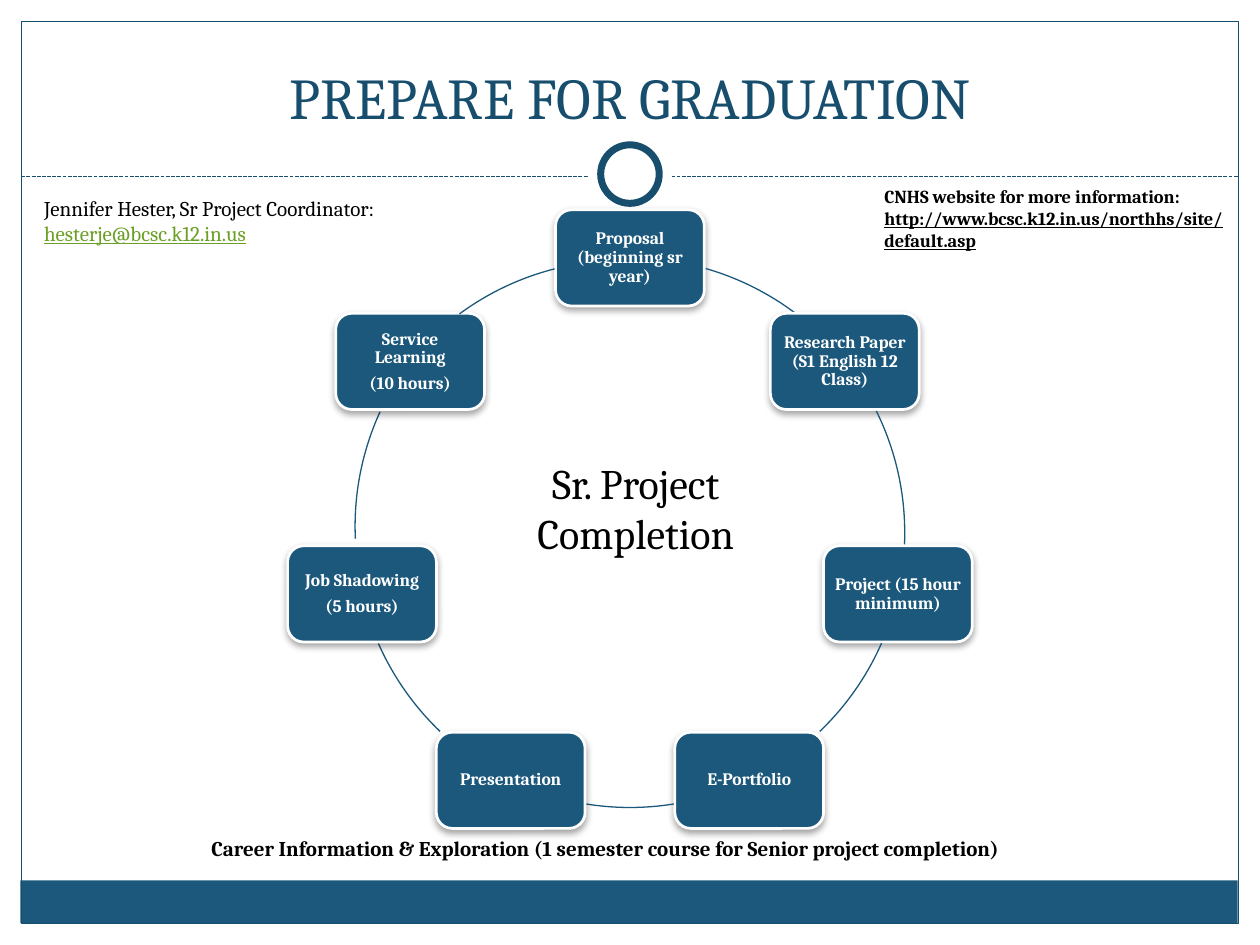
"""Build the senior project cycle slide."""
import math
from dataclasses import dataclass

import lxml.etree
import pptx
import pptx.dml.color
import pptx.enum.dml
import pptx.enum.shapes
import pptx.enum.text
import pptx.oxml.ns
import pptx.util
from pptx.util import Cm, Pt

RGBColor = pptx.dml.color.RGBColor
Shape = pptx.enum.shapes.MSO_SHAPE
Align = pptx.enum.text.PP_ALIGN
Anchor = pptx.enum.text.MSO_ANCHOR
qn = pptx.oxml.ns.qn

NAVY = RGBColor(0x18, 0x4E, 0x6D)
BLUE = RGBColor(0x1B, 0x58, 0x7C)
GREEN = RGBColor(0x6B, 0x9F, 0x25)
WHITE = RGBColor(0xFF, 0xFF, 0xFF)
BLACK = RGBColor(0, 0, 0)
FONT = "Cambria"

CENTER_X, CENTER_Y, RADIUS = 12.7, 10.74, 5.54
STEP_WIDTH, STEP_HEIGHT = 3.0, 1.94


@dataclass
class Step:
    """A project step and the angles of the arc that follows it."""
    lines: list[str]
    arc_start: float
    arc_end: float
    shift: float = 0
    arc_dx: float = 0
    arc_dy: float = 0


@dataclass
class Note:
    """A free text block with its place and format."""
    lines: list[str]
    box: tuple[float, float, float, float]
    size: float
    bold: bool = False
    align: Align = Align.LEFT
    link_color: RGBColor = BLACK


STEPS = [
    Step(["Proposal (beginning sr year)"], 286, 307),
    Step(["Research Paper (S1 English 12 Class)"], 333.7, 2.6),
    Step(["Project (15 hour minimum)"], 23.7, 46.3),
    Step(["E-Portfolio"], 80.8, 99.2),
    Step(["Presentation"], 133.7, 156.3),
    Step(["Job Shadowing", "(5 hours)"], 177.4, 204.6, arc_dy=-0.13),
    Step(["Service Learning", "(10 hours)"], 233.6, 255.7,
         shift=-0.1, arc_dx=-0.15, arc_dy=0.05),
]

NOTES = [
    Note(["Sr. Project Completion"], (9.32, 9.09, 6.99, 2.31), 24, align=Align.CENTER),
    Note(["Jennifer Hester, Sr Project Coordinator:", "hesterje@bcsc.k12.in.us"],
         (0.64, 3.81, 8.05, 1.27), 12, link_color=GREEN),
    Note(["CNHS website for more information:",
          "http://www.bcsc.k12.in.us/northhs/site/default.asp"],
         (17.58, 3.61, 7.62, 1.6), 10.5, bold=True),
    Note(["Career Information & Exploration (1 semester course for Senior project completion)"],
         (4.01, 16.71, 19.89, 0.76), 12, bold=True),
]


def write_text(frame, lines: list[str], *, size: float, color: RGBColor = BLACK,
               bold: bool = False, align: Align = Align.LEFT, anchor: Anchor = Anchor.TOP,
               spacing: float = 1.0, after: float = 0, link_color: RGBColor | None = None):
    frame.word_wrap = True
    frame.auto_size = pptx.enum.text.MSO_AUTO_SIZE.NONE
    frame.vertical_anchor = anchor
    for index, line in enumerate(lines):
        paragraph = frame.add_paragraph() if index else frame.paragraphs[0]
        paragraph.alignment = align
        paragraph.line_spacing = spacing
        paragraph.space_after = Pt(after)
        run = paragraph.add_run()
        run.text = line
        is_link = bool(index and link_color is not None)
        run.font.name = FONT
        run.font.size = Pt(size)
        run.font.bold = bold
        run.font.underline = is_link
        run.font.color.rgb = link_color if is_link else color


def add_figure(slide, kind: Shape, box: tuple[float, float, float, float], *,
               fill: RGBColor | None = None, line: RGBColor | None = None,
               weight: float = 0.75):
    figure = slide.shapes.add_shape(kind, *map(Cm, box))
    figure.shadow.inherit = False
    if fill is None:
        figure.fill.background()
    else:
        figure.fill.solid()
        figure.fill.fore_color.rgb = fill
    if line is None:
        figure.line.fill.background()
    else:
        figure.line.color.rgb = line
        figure.line.width = Pt(weight)
    return figure


def add_soft_shadow(figure) -> None:
    effects = figure._element.spPr.find(qn("a:effectLst"))
    shadow = lxml.etree.SubElement(effects, qn("a:outerShdw"), blurRad=str(Pt(4)),
                                   dist=str(Pt(2)), dir="5400000", rotWithShape="0")
    tint = lxml.etree.SubElement(shadow, qn("a:srgbClr"), val="000000")
    lxml.etree.SubElement(tint, qn("a:alpha"), val="35000")


def add_decor(slide) -> None:
    add_figure(slide, Shape.RECTANGLE, (0.41, 17.75, 24.54, 0.86), fill=BLUE)
    add_figure(slide, Shape.RECTANGLE, (0.43, 0.43, 24.54, 18.19), line=NAVY)
    divider = slide.shapes.add_connector(pptx.enum.shapes.MSO_CONNECTOR.STRAIGHT,
                                         Cm(0.43), Cm(3.56), Cm(24.97), Cm(3.56))
    divider.line.color.rgb = NAVY
    divider.line.width = Pt(0.75)
    divider.line.dash_style = pptx.enum.dml.MSO_LINE.SQUARE_DOT
    lxml.etree.SubElement(divider._element.spPr, qn("a:effectLst"))
    add_figure(slide, Shape.OVAL, (11.85, 2.66, 1.7, 1.7), fill=WHITE)
    add_figure(slide, Shape.OVAL, (12.11, 2.92, 1.18, 1.18), fill=WHITE, line=NAVY, weight=4)


def add_step(slide, step: Step, turn: float) -> None:
    left = CENTER_X + RADIUS * math.sin(turn) + step.shift - STEP_WIDTH / 2
    top = CENTER_Y - RADIUS * math.cos(turn) - STEP_HEIGHT / 2
    card = add_figure(slide, Shape.ROUNDED_RECTANGLE, (left, top, STEP_WIDTH, STEP_HEIGHT),
                      fill=BLUE, line=WHITE, weight=1.57)
    add_soft_shadow(card)
    frame = card.text_frame
    frame.margin_left = frame.margin_right = Cm(0.1)
    frame.margin_top = frame.margin_bottom = Cm(0.1)
    write_text(frame, step.lines, size=10, color=WHITE, bold=True, align=Align.CENTER,
               anchor=Anchor.MIDDLE, spacing=0.9, after=3.5)
    arc = add_figure(slide, Shape.ARC,
                     (CENTER_X - RADIUS + step.arc_dx, CENTER_Y - RADIUS + step.arc_dy,
                      2 * RADIUS, 2 * RADIUS), line=BLUE)
    arc.adjustments[0] = step.arc_start * 0.6
    arc.adjustments[1] = step.arc_end * 0.6


def add_note(slide, note: Note) -> None:
    block = slide.shapes.add_textbox(*map(Cm, note.box))
    write_text(block.text_frame, note.lines, size=note.size, bold=note.bold,
               align=note.align, link_color=note.link_color)


def main() -> None:
    deck = pptx.Presentation()
    deck.slide_width, deck.slide_height = Cm(25.4), Cm(19.05)
    slide = deck.slides.add_slide(deck.slide_layouts[5])
    title = slide.shapes.title
    title.left, title.top, title.width, title.height = map(Cm, (0.85, 0.64, 23.7, 2.12))
    write_text(title.text_frame, ["PREPARE FOR GRADUATION"], size=33, color=NAVY,
               align=Align.CENTER, anchor=Anchor.BOTTOM)
    add_decor(slide)
    for index, step in enumerate(STEPS):
        add_step(slide, step, index * math.tau / len(STEPS))
    for note in NOTES:
        add_note(slide, note)
    deck.save("out.pptx")


if __name__ == "__main__":
    main()
